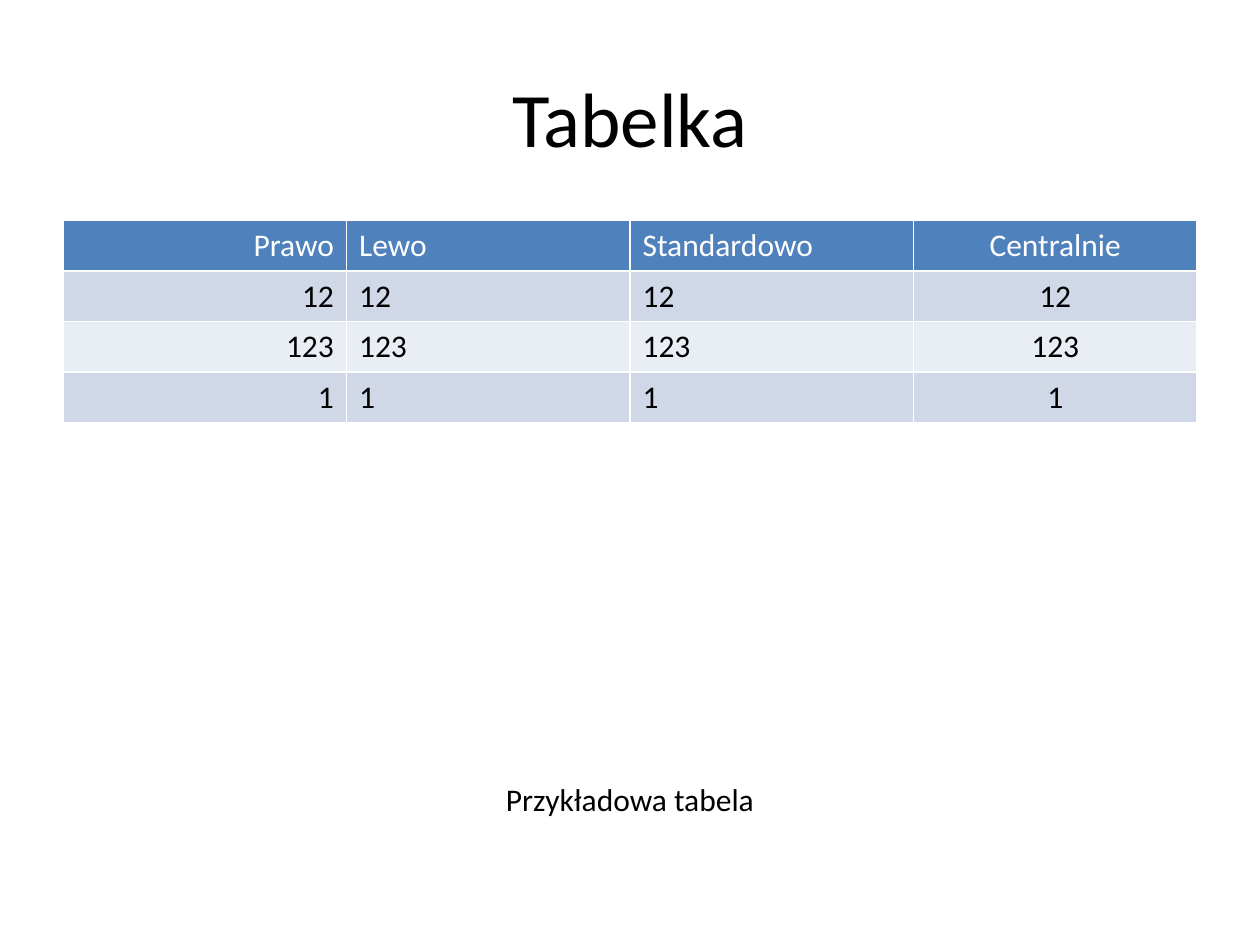
import pptx
import pptx.util
import pptx.dml.color
import pptx.enum.text

Inches = pptx.util.Inches
RGBColor = pptx.dml.color.RGBColor
ALIGN = pptx.enum.text.PP_ALIGN
ANCHOR = pptx.enum.text.MSO_ANCHOR

BLACK = RGBColor(0x00, 0x00, 0x00)
WHITE = RGBColor(0xFF, 0xFF, 0xFF)
HEADER_BLUE = RGBColor(0x4F, 0x81, 0xBD)
BAND_DARK = RGBColor(0xD0, 0xD8, 0xE8)
BAND_LIGHT = RGBColor(0xE9, 0xED, 0xF4)

LEFT, WIDTH = Inches(0.5), Inches(9)
ROW_HEIGHT = Inches(0.4)
COLUMNS = [
    ("Prawo", ALIGN.RIGHT),
    ("Lewo", ALIGN.LEFT),
    ("Standardowo", ALIGN.LEFT),
    ("Centralnie", ALIGN.CENTER),
]
VALUES = ["12", "123", "1"]


def write(tf, text, size, color, align):
    p = tf.paragraphs[0]
    p.text = text
    p.alignment = align
    p.font.name = "Calibri"
    p.font.size = pptx.util.Pt(size)
    p.font.bold = False
    p.font.color.rgb = color


def add_text(s, text, top, height, size, anchor):
    tf = s.shapes.add_textbox(LEFT, top, WIDTH, height).text_frame
    tf.word_wrap = True
    tf.vertical_anchor = anchor
    write(tf, text, size, BLACK, ALIGN.CENTER)


def fill_cell(cell, text, fill, color, align):
    cell.fill.solid()
    cell.fill.fore_color.rgb = fill
    write(cell.text_frame, text, 18, color, align)


def add_alignment_table(s, top):
    rows = len(VALUES) + 1
    table = s.shapes.add_table(
        rows, len(COLUMNS), LEFT, top, WIDTH, ROW_HEIGHT * rows
    ).table
    for col, (heading, align) in enumerate(COLUMNS):
        fill_cell(table.cell(0, col), heading, HEADER_BLUE, WHITE, align)
        for row, value in enumerate(VALUES, start=1):
            band = BAND_DARK if row % 2 else BAND_LIGHT
            fill_cell(table.cell(row, col), value, band, BLACK, align)


def main():
    prs = pptx.Presentation()
    prs.slide_width, prs.slide_height = Inches(10), Inches(7.5)
    s = prs.slides.add_slide(prs.slide_layouts[6])
    add_text(s, "Tabelka", Inches(0.3), Inches(1.25), 44, ANCHOR.MIDDLE)
    add_alignment_table(s, Inches(1.75))
    add_text(s, "Przykładowa tabela", Inches(6.14), Inches(0.56), 18, ANCHOR.TOP)
    prs.save("out.pptx")


if __name__ == "__main__":
    main()
